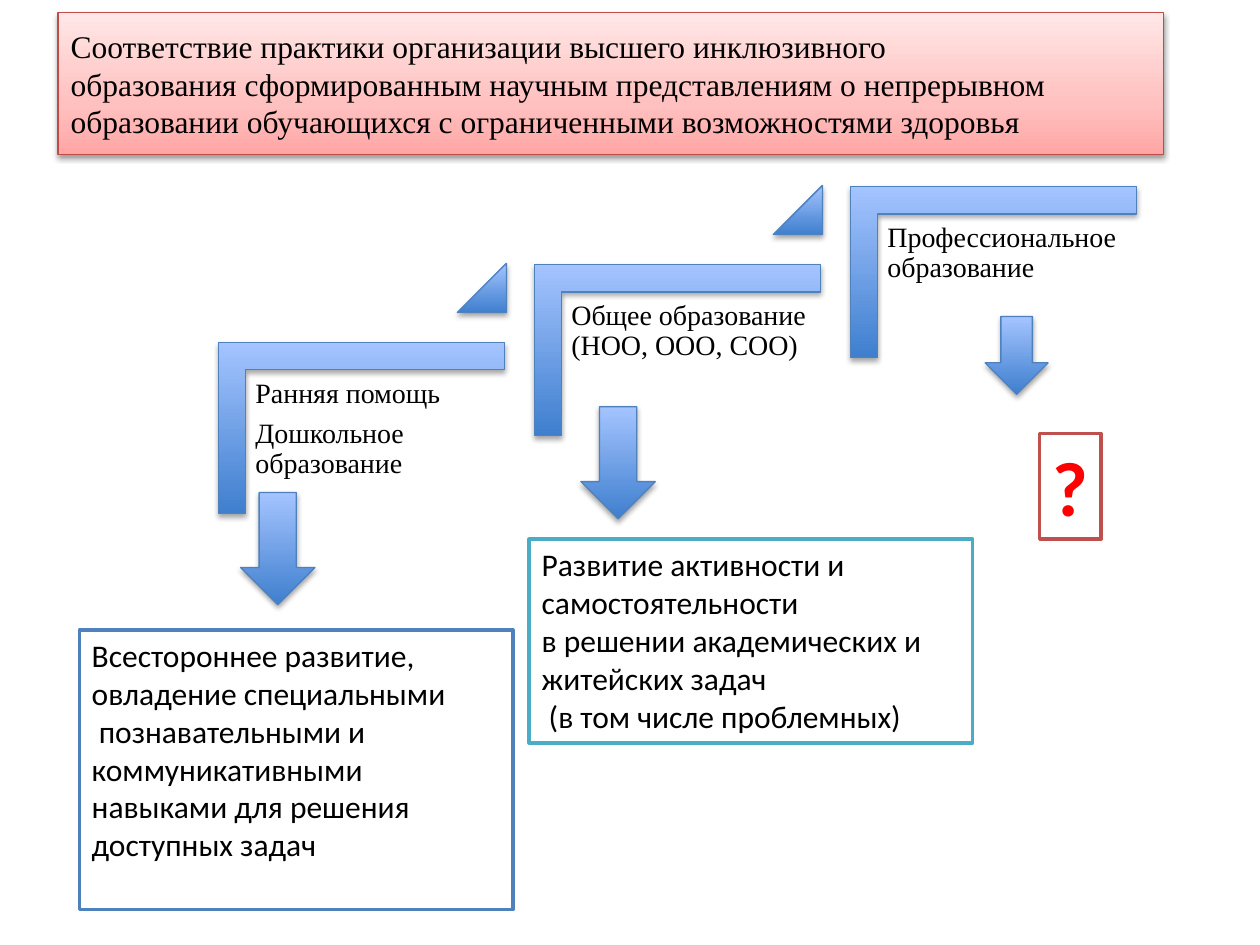
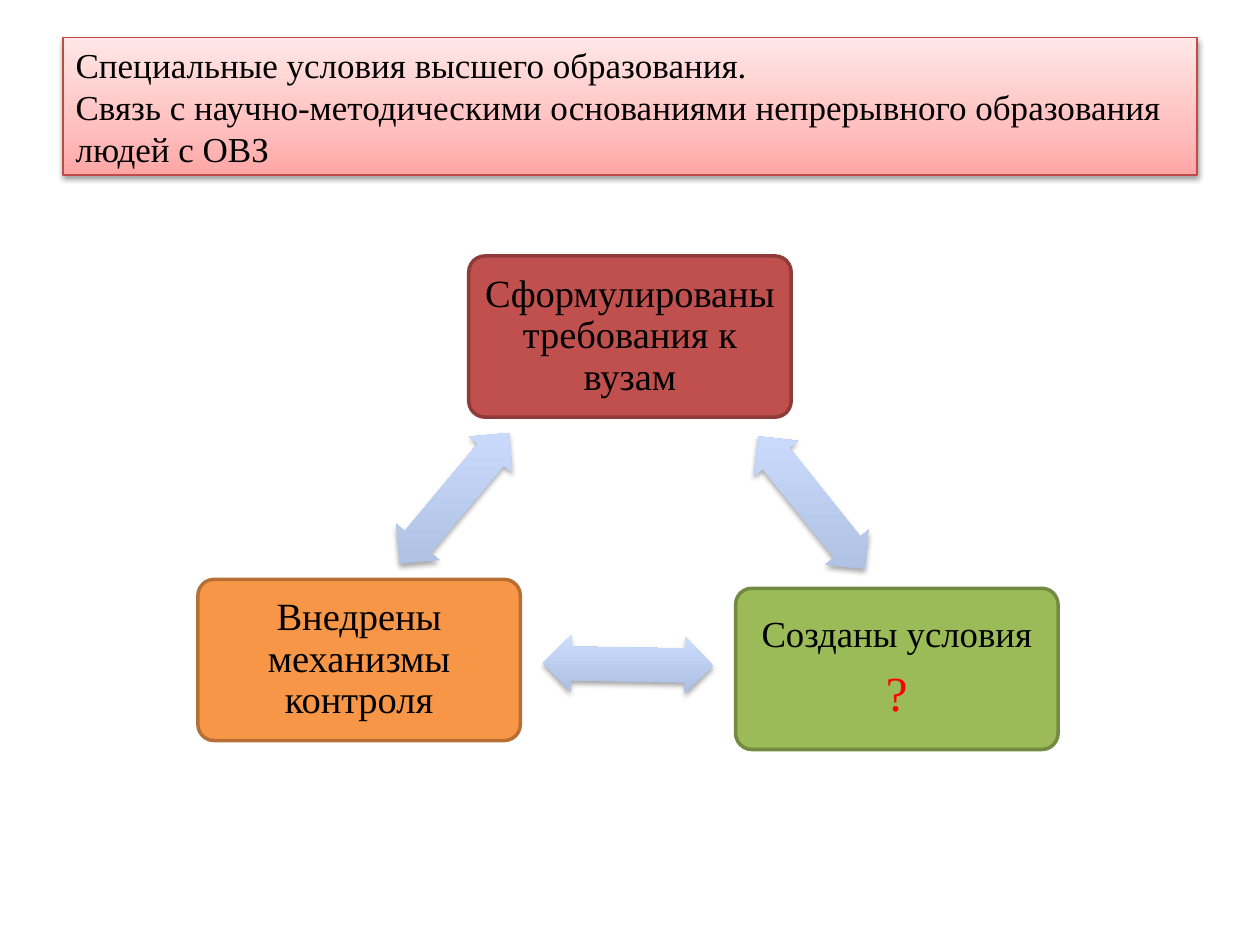
"""Build two slides on continuous inclusive education: a rising staircase and a cycle of conditions."""
import math
from dataclasses import dataclass

import pptx
import pptx.dml.color
import pptx.enum.shapes
import pptx.enum.text
import pptx.oxml.ns
import pptx.util
from lxml import etree

Cm = pptx.util.Cm
Pt = pptx.util.Pt
SHAPE = pptx.enum.shapes.MSO_SHAPE
ALIGN = pptx.enum.text.PP_ALIGN
ANCHOR = pptx.enum.text.MSO_ANCHOR
qn = pptx.oxml.ns.qn


@dataclass(frozen=True)
class Theme:
    """Colours, fonts and type sizes of both slides."""
    serif: str = "Times New Roman"
    sans: str = "Calibri"
    ink: str = "000000"
    paper: str = "FFFFFF"
    question: str = "FF0000"
    banner: tuple = ((0, "FFA6A5"), (35, "FFC0BF"), (100, "FFE7E7"))
    banner_edge: str = "BF4C48"
    step: tuple = ((0, "3F7FCE"), (100, "A4C4FF"))
    step_edge: str = "4F81BD"
    link: tuple = ((0, "ADBFE1"), (100, "CCDDFF"))
    hairline: float = 0.75
    outline: float = 2
    step_size: int = 16
    outcome_size: int = 18
    mark_size: int = 44


THEME = Theme()

STAIR_TITLE = ("Соответствие практики организации высшего инклюзивного \v"
               "образования сформированным научным представлениям о непрерывном "
               "образовании обучающихся с ограниченными возможностями здоровья")
STEPS = [
    ["Ранняя помощь", "Дошкольное образование"],
    ["Общее образование (НОО, ООО, СОО)"],
    ["Профессиональное образование"],
]
DOWN_ARROWS = [(11.71, 8.2, 1.5, 2.26), (4.85, 9.93, 1.5, 2.26), (19.86, 6.38, 1.27, 1.57)]
OUTCOMES = [
    {"box": (10.67, 10.87, 8.94, 4.11), "edge": "4BACC6",
     "lines": ["Развитие активности и самостоятельности",
               "в решении академических и житейских задач",
               " (в том числе проблемных)"]},
    {"box": (1.6, 12.7, 8.74, 5.64), "edge": "4F81BD",
     "lines": ["Всестороннее развитие,", "овладение специальными",
               " познавательными и коммуникативными",
               "навыками для решения доступных задач"]},
]
MARK = {"box": (20.96, 8.74, 1.24, 2.13), "edge": "C0504D", "lines": ["?"]}

CYCLE_TITLE = ("Специальные условия высшего образования. \v"
               "Связь с научно-методическими основаниями непрерывного образования людей с ОВЗ")
CARDS = [
    {"corner": (9.45, 5.16), "fill": "C0504D", "edge": "8E3B39", "link_shift": 0.97,
     "lines": [("Сформулированы требования к вузам", 22, THEME.ink)]},
    {"corner": (14.83, 11.86), "fill": "9BBB59", "edge": "738A42", "link_shift": 0,
     "lines": [("Созданы условия", 21, THEME.ink), ("?", 28, THEME.question)]},
    {"corner": (3.99, 11.68), "fill": "F79646", "edge": "B76F34", "link_shift": -0.81,
     "lines": [("Внедрены механизмы контроля", 22, THEME.ink)]},
]

STEP_START, STEP_PITCH = (4.98, 7.47), (6.37, -1.57)
CARD_SIZE = (6.5, 3.25)
LINK_SIZE = (3.43, 1.14)


def rgb(value):
    """Turn a hex string into a colour."""
    return pptx.dml.color.RGBColor.from_string(value)


def outline(shape, color, width):
    """Draw a solid outline."""
    shape.line.color.rgb = rgb(color)
    shape.line.width = Pt(width)


def paint_gradient(shape, stops):
    """Fill upwards through the stops, independent of the shape's rotation."""
    shape.fill.gradient()
    shape.fill.gradient_angle = 90
    gradient = shape._element.spPr.find(qn("a:gradFill"))
    gradient.set("rotWithShape", "0")
    stop_list = gradient.find(qn("a:gsLst"))
    for old_stop in list(stop_list):
        stop_list.remove(old_stop)
    for position, color in stops:
        stop = etree.SubElement(stop_list, qn("a:gs"), pos=str(position * 1000))
        etree.SubElement(stop, qn("a:srgbClr"), val=color)


def cast_shadow(shape, opacity=35, distance=1.8):
    """Add a soft shadow straight below."""
    shape.shadow.inherit = False
    effects = shape._element.spPr.find(qn("a:effectLst"))
    shadow = etree.SubElement(effects, qn("a:outerShdw"), blurRad=str(Pt(3.1)),
                              dist=str(Pt(distance)), dir="5400000", rotWithShape="0")
    color = etree.SubElement(shadow, qn("a:srgbClr"), val="000000")
    etree.SubElement(color, qn("a:alpha"), val=str(opacity * 1000))


def add_shape(slide, kind, box, adjustments=(), rotation=0):
    """Add a preset shape at a box given in centimetres."""
    shape = slide.shapes.add_shape(kind, *map(Cm, box))
    shape.shadow.inherit = False
    shape.rotation = rotation
    for index, value in enumerate(adjustments):
        shape.adjustments[index] = value
    return shape


def add_glossy(slide, kind, box, stops, edge=None, **geometry):
    """Add a shaded shape with a shadow."""
    shape = add_shape(slide, kind, box, **geometry)
    paint_gradient(shape, stops)
    if edge:
        outline(shape, edge, THEME.hairline)
    else:
        shape.line.fill.background()
    cast_shadow(shape)
    return shape


def make_corner(shape, thickness):
    """Turn a rectangle into the preset corner with equally thick arms."""
    geometry = shape._element.spPr.find(qn("a:prstGeom"))
    geometry.set("prst", "corner")
    guides = geometry.find(qn("a:avLst"))
    for guide in ("adj1", "adj2"):
        etree.SubElement(guides, qn("a:gd"), name=guide, fmla=f"val {thickness}")


def write(shape, lines, face, align=ALIGN.LEFT, anchor=ANCHOR.TOP, inset=None,
          wrap=True, tight=False, bold=False):
    """Write (text, size, colour) lines, one paragraph each."""
    frame = shape.text_frame
    frame.auto_size = pptx.enum.text.MSO_AUTO_SIZE.NONE
    frame.word_wrap = wrap
    frame.vertical_anchor = anchor
    if inset is not None:
        frame.margin_left = frame.margin_right = Cm(inset)
        frame.margin_top = frame.margin_bottom = Cm(inset)
    for index, (text, size, color) in enumerate(lines):
        paragraph = frame.paragraphs[0] if index == 0 else frame.add_paragraph()
        paragraph.text = text
        paragraph.alignment = align
        if tight:
            paragraph.line_spacing = 0.9
            paragraph.space_after = Pt(round(size * 0.35, 1))
        paragraph.font.name = face
        paragraph.font.size = Pt(size)
        paragraph.font.bold = bold
        paragraph.font.color.rgb = rgb(color)


def add_titled_slide(deck, title, box, size):
    """Add a slide whose title sits on a pink banner."""
    slide = deck.slides.add_slide(deck.slide_layouts[5])
    banner = slide.shapes.title
    banner.left, banner.top, banner.width, banner.height = map(Cm, box)
    paint_gradient(banner, THEME.banner)
    outline(banner, THEME.banner_edge, THEME.hairline)
    cast_shadow(banner, opacity=38, distance=1.6)
    write(banner, [(title, size, THEME.ink)], THEME.serif, anchor=ANCHOR.MIDDLE)
    return slide


def add_step(slide, index, lines):
    """Add one stair with its text and the marker leading to the next stair."""
    left, top = (start + index * pitch for start, pitch in zip(STEP_START, STEP_PITCH))
    stair = add_glossy(slide, SHAPE.RECTANGLE, (left + 0.58, top - 1.73, 3.45, 5.77),
                       THEME.step, THEME.step_edge, rotation=90)
    make_corner(stair, 16100)
    caption = slide.shapes.add_textbox(Cm(left), Cm(top), Cm(5.21), Cm(4.55))
    write(caption, [(line, THEME.step_size, THEME.ink) for line in lines],
          THEME.serif, inset=0.17, tight=True)
    if index < len(STEPS) - 1:
        add_glossy(slide, SHAPE.ISOSCELES_TRIANGLE, (left + 4.24, top - 2.16, 0.99, 0.99),
                   THEME.step, THEME.step_edge, adjustments=(1,))


def add_outcome(slide, outcome, size, color, **style):
    """Add a white outlined box with an outcome."""
    panel = add_shape(slide, SHAPE.RECTANGLE, outcome["box"])
    panel.fill.solid()
    panel.fill.fore_color.rgb = rgb(THEME.paper)
    outline(panel, outcome["edge"], THEME.outline)
    write(panel, [(line, size, color) for line in outcome["lines"]], THEME.sans, **style)


def add_card(slide, card):
    """Add one rounded card of the cycle."""
    panel = add_shape(slide, SHAPE.ROUNDED_RECTANGLE, card["corner"] + CARD_SIZE, (0.1,))
    panel.fill.solid()
    panel.fill.fore_color.rgb = rgb(card["fill"])
    outline(panel, card["edge"], THEME.outline)
    write(panel, card["lines"], THEME.serif, ALIGN.CENTER, ANCHOR.MIDDLE, 0.23, tight=True)


def add_link(slide, card, following):
    """Add the double arrow that points from one card to the following one."""
    (x1, y1), (x2, y2) = card["corner"], following["corner"]
    width, height = LINK_SIZE
    center_x = (x1 + x2 + CARD_SIZE[0]) / 2 + card["link_shift"]
    center_y = (y1 + y2 + CARD_SIZE[1]) / 2
    add_glossy(slide, SHAPE.LEFT_RIGHT_ARROW,
               (center_x - width / 2, center_y - height / 2, width, height), THEME.link,
               adjustments=(0.6, 0.5),
               rotation=math.degrees(math.atan2(y2 - y1, x2 - x1)) % 360)


def main():
    """Build and save both slides."""
    deck = pptx.Presentation()
    deck.slide_width, deck.slide_height = Cm(25.4), Cm(19.05)

    stairs = add_titled_slide(deck, STAIR_TITLE, (1.17, 0.25, 22.28, 2.87), 18)
    for box in DOWN_ARROWS:
        add_glossy(stairs, SHAPE.DOWN_ARROW, box, THEME.step, THEME.step_edge)
    for index, lines in enumerate(STEPS):
        add_step(stairs, index, lines)
    for outcome in OUTCOMES:
        add_outcome(stairs, outcome, THEME.outcome_size, THEME.ink)
    add_outcome(stairs, MARK, THEME.mark_size, THEME.question, wrap=False, bold=True)

    cycle = add_titled_slide(deck, CYCLE_TITLE, (1.27, 0.76, 22.86, 2.77), 20)
    for card, following in zip(CARDS, CARDS[1:] + CARDS[:1]):
        add_card(cycle, card)
        add_link(cycle, card, following)

    deck.save("out.pptx")


if __name__ == "__main__":
    main()
